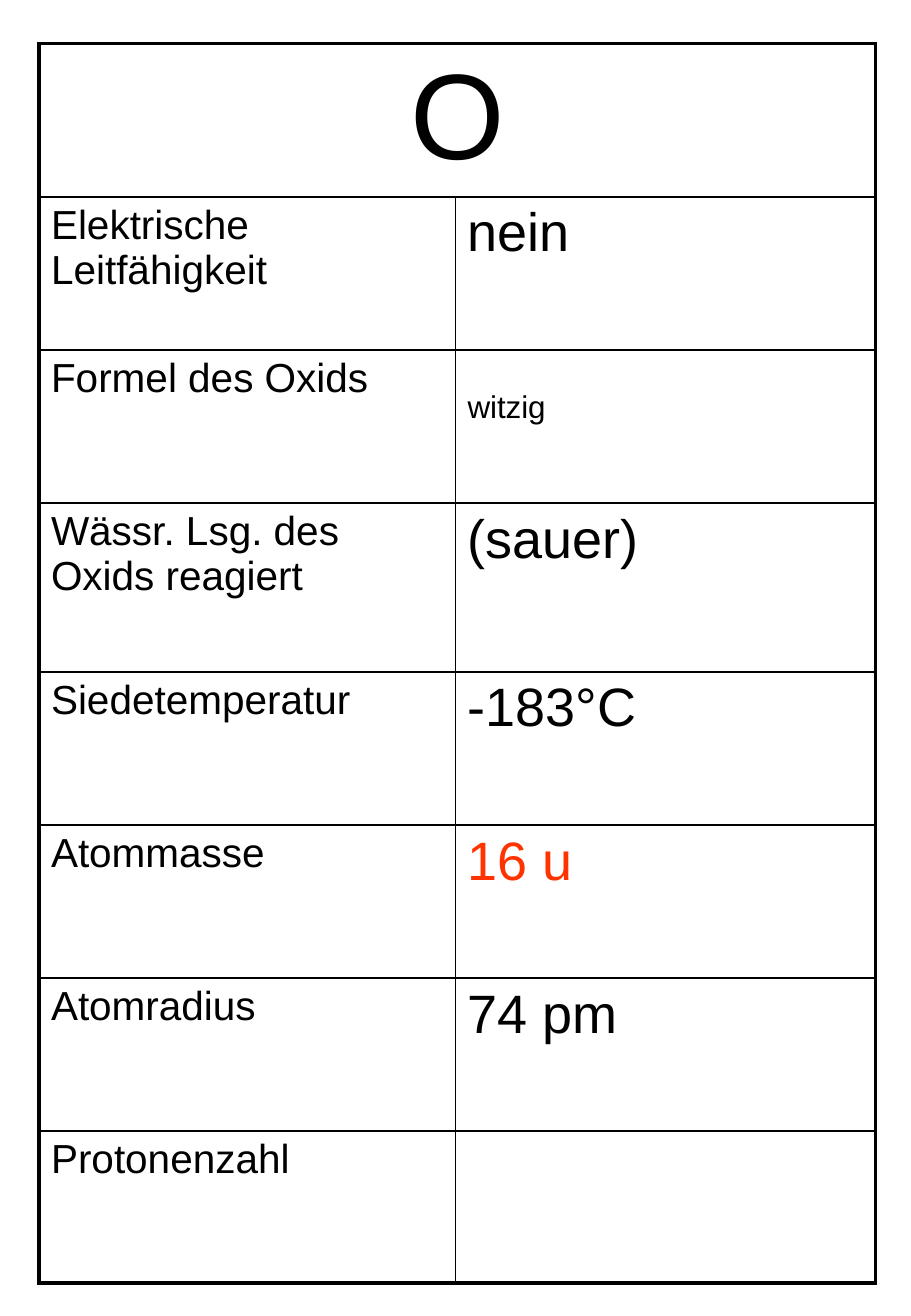
import pptx
import pptx.util
import pptx.dml.color
import pptx.enum.text
import pptx.oxml
import pptx.oxml.ns
from pptx.util import Inches

BLACK = "000000"
RED = "FF3300"
THIN, THICK = 1, 2.25
COLUMN_WIDTHS = [3.43, 3.46]
ROW_HEIGHTS = [1.26, 1.26, 1.26, 1.39, 1.26, 1.26, 1.26, 1.25]
TITLE = {"size": 72}
LABEL = {"size": 24}
VALUE = {"size": 32}

# Property, value and format of the value
PROPERTIES = [
    ("Elektrische Leitfähigkeit", "nein", VALUE),
    ("Formel des Oxids", "witzig", VALUE | {"baseline": -25000}),
    ("Wässr. Lsg. des Oxids reagiert", "(sauer)", VALUE),
    ("Siedetemperatur", "-183°C", VALUE),
    ("Atommasse", "16 u", VALUE | {"color": RED}),
    ("Atomradius", "74 pm", VALUE),
    ("Protonenzahl", "", VALUE),
]


def rgb(value):
    return pptx.dml.color.RGBColor.from_string(value)


def write(cell, text, style):
    """Put one formatted span of text into a cell."""
    if not text:
        return
    span = cell.text_frame.paragraphs[0].add_run()
    span.text = text
    font_values = {"name": "Arial", "size": pptx.util.Pt(style["size"])}
    for name, value in font_values.items():
        setattr(span.font, name, value)
    span.font.color.rgb = rgb(style.get("color", BLACK))
    if "baseline" in style:
        span.font._element.set("baseline", str(style["baseline"]))


def set_borders(cell, widths):
    """Draw the four sides of a cell; widths are points by side."""
    properties = cell._tc.get_or_add_tcPr()
    for side in "LRTB":
        line = pptx.oxml.parse_xml(
            f'<a:ln{side} {pptx.oxml.ns.nsdecls("a")} w="{pptx.util.Pt(widths[side])}">'
            f'<a:solidFill><a:srgbClr val="{BLACK}"/></a:solidFill></a:ln{side}>'
        )
        properties.append(line)


def add_grid(page):
    """Add the empty table: thick frame, thin inner lines, no fill."""
    rows, columns = len(ROW_HEIGHTS), len(COLUMN_WIDTHS)
    table = page.shapes.add_table(
        rows, columns, Inches(0.32), Inches(0.36),
        Inches(sum(COLUMN_WIDTHS)), Inches(sum(ROW_HEIGHTS)),
    ).table
    for name in ("first_row", "horz_banding"):
        setattr(table, name, False)
    for column, width in zip(table.columns, COLUMN_WIDTHS):
        column.width = Inches(width)
    for row, height in zip(table.rows, ROW_HEIGHTS):
        row.height = Inches(height)

    table.cell(0, 0).merge(table.cell(0, columns - 1))
    for row in range(rows):
        for column in range(columns):
            cell = table.cell(row, column)
            merged = row == 0
            outer = {
                "L": merged or column == 0,
                "R": merged or column == columns - 1,
                "T": row == 0,
                "B": row == rows - 1,
            }
            set_borders(cell, {side: THICK if edge else THIN
                               for side, edge in outer.items()})
            cell.fill.background()
    return table


def main():
    deck = pptx.Presentation()
    deck.slide_width, deck.slide_height = Inches(7.5), Inches(10.83)
    page = deck.slides.add_slide(deck.slide_layouts[6])
    table = add_grid(page)

    # Element symbol
    symbol = table.cell(0, 0)
    write(symbol, "O", TITLE)
    symbol.text_frame.paragraphs[0].alignment = pptx.enum.text.PP_ALIGN.CENTER

    # Properties of the element
    for row, (label, value, style) in enumerate(PROPERTIES, start=1):
        write(table.cell(row, 0), label, LABEL)
        write(table.cell(row, 1), value, style)

    deck.save("out.pptx")


if __name__ == "__main__":
    main()
